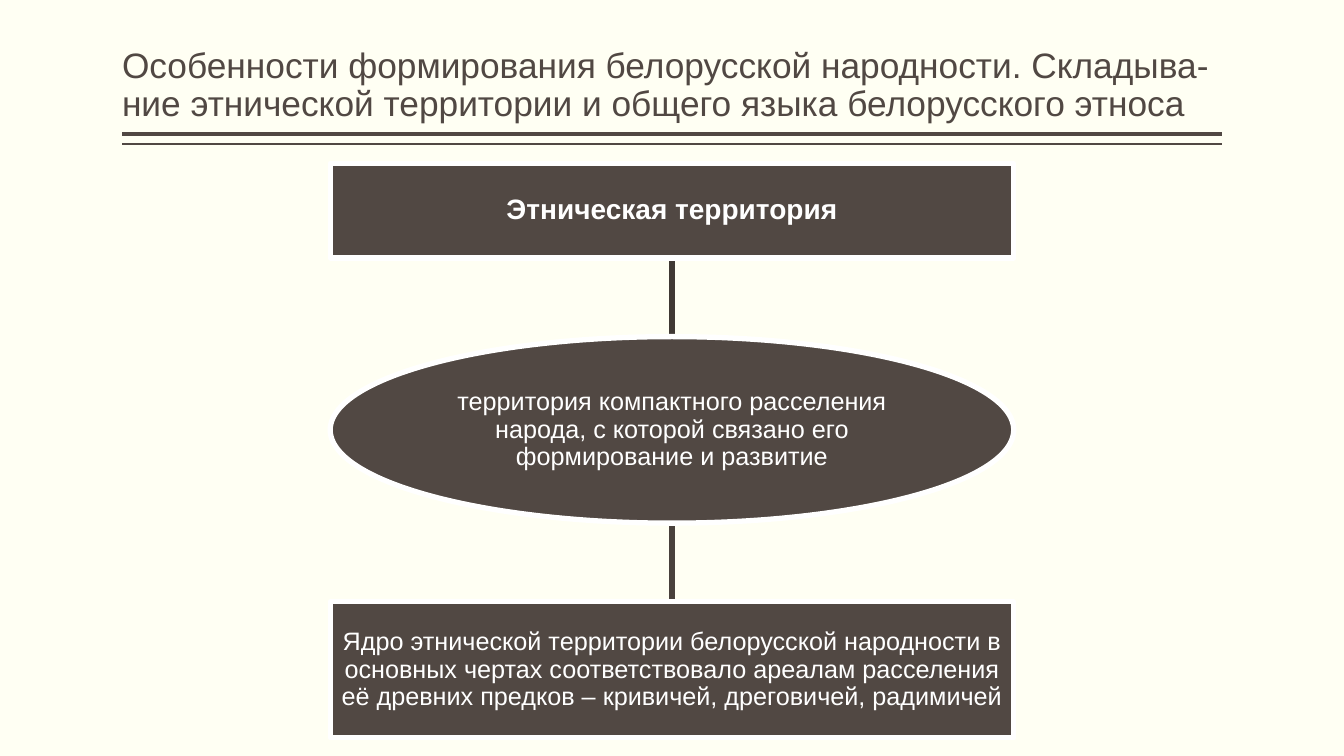
from dataclasses import dataclass

from lxml import etree
from pptx import Presentation
from pptx.dml.color import RGBColor
from pptx.enum.shapes import MSO_CONNECTOR, MSO_SHAPE
from pptx.enum.text import MSO_ANCHOR, MSO_AUTO_SIZE, PP_ALIGN
from pptx.oxml import parse_xml
from pptx.oxml.ns import nsdecls, qn
from pptx.util import Emu, Inches, Pt

RECT, OVAL = MSO_SHAPE.RECTANGLE, MSO_SHAPE.OVAL
STRAIGHT = MSO_CONNECTOR.STRAIGHT
MIDDLE, BOTTOM = MSO_ANCHOR.MIDDLE, MSO_ANCHOR.BOTTOM
LEFT, CENTER = PP_ALIGN.LEFT, PP_ALIGN.CENTER
NO_FIT = MSO_AUTO_SIZE.NONE
WIDTH, HEIGHT = Inches(13.33), Inches(7.5)


@dataclass(frozen=True)
class Theme:
    paper: str = "FFFFF3"
    brown: str = "514843"
    white: str = "FFFFFF"
    font: str = "Arial"
    title: float = 25.2
    heading: float = 20
    body: float = 18
    outline: float = 3.78
    spacing: float = 0.9


@dataclass(frozen=True)
class Node:
    shape: MSO_SHAPE
    height: float
    text: str
    size: float
    bold: bool = False


@dataclass(frozen=True)
class Line:
    x1: float
    y1: float
    x2: float
    y2: float
    color: str
    width: float


THEME = Theme()
MARGIN = 9.08
NODE_WIDTH, NODE_TOP, NODE_GAP = 50.86, 21.6, 10.4
TITLE = ("Особенности формирования белорусской народности. Складыва- "
         "ние этнической территории и общего языка белорусского этноса")
RULES = [Line(MARGIN, y, 100 - MARGIN, y, THEME.brown, width)
         for y, width in ((17.73, 3), (19.07, 1))]
NODES = [
    Node(RECT, 12.53, "Этническая территория", THEME.heading, True),
    Node(OVAL, 24.67, "территория компактного расселения народа, "
         "с которой связано его формирование и развитие", THEME.body),
    Node(RECT, 18, "Ядро этнической территории белорусской народности в "
         "основных чертах соответствовало ареалам расселения её древних "
         "предков – кривичей, дреговичей, радимичей", THEME.body),
]
LINK_COLORS = ["403934", "49413C"]
TEXT_SHADOW = (
    f'<a:effectLst {nsdecls("a")}><a:outerShdw blurRad="38100" dist="38100" '
    'dir="2700000" algn="tl"><a:srgbClr val="000000"><a:alpha val="43000"/>'
    '</a:srgbClr></a:outerShdw></a:effectLst>')


def col(share: float) -> Emu:
    return Emu(round(WIDTH * share / 100))


def row(share: float) -> Emu:
    return Emu(round(HEIGHT * share / 100))


def rgb(color: str) -> RGBColor:
    return RGBColor.from_string(color)


def assign(target, values: dict) -> None:
    for name, value in values.items():
        setattr(target, name, value)


def write(sp, text: str, size: float, color: str, bold: bool, align: PP_ALIGN,
          anchor: MSO_ANCHOR, inset_x: float, inset_y: float) -> None:
    tf = sp.text_frame
    assign(tf, dict(word_wrap=True, auto_size=NO_FIT, vertical_anchor=anchor,
                    margin_left=Inches(inset_x), margin_right=Inches(inset_x),
                    margin_top=Inches(inset_y), margin_bottom=Inches(inset_y)))
    p = tf.paragraphs[0]
    assign(p, dict(alignment=align, line_spacing=THEME.spacing,
                   space_before=Pt(0)))
    r = p.add_run()
    r.text = text
    r.font.color.rgb = rgb(color)
    r.font._element.append(parse_xml(TEXT_SHADOW))
    assign(r.font, dict(size=Pt(size), bold=bold, name=THEME.font))


def draw_line(s, line: Line) -> None:
    cx = s.shapes.add_connector(STRAIGHT, col(line.x1), row(line.y1),
                                col(line.x2), row(line.y2))
    cx.line.color.rgb = rgb(line.color)
    cx.line.width = Pt(line.width)
    etree.SubElement(cx._element.spPr, qn("a:effectLst"))


def draw_node(s, node: Node, top: float) -> None:
    sp = s.shapes.add_shape(node.shape, col(50 - NODE_WIDTH / 2), row(top),
                            col(NODE_WIDTH), row(node.height))
    sp.shadow.inherit = False
    sp.fill.solid()
    sp.fill.fore_color.rgb = rgb(THEME.brown)
    sp.line.color.rgb = rgb(THEME.white)
    sp.line.width = Pt(THEME.outline)
    write(sp, node.text, node.size, THEME.white, node.bold, CENTER, MIDDLE,
          0.01, 0.01)


def draw_title(s) -> None:
    sp = s.shapes.title
    assign(sp, dict(left=col(MARGIN), top=row(1.07),
                    width=col(100 - 2 * MARGIN), height=row(16)))
    write(sp, TITLE, THEME.title, THEME.brown, False, LEFT, BOTTOM, 0, 0.05)


def main() -> None:
    prs = Presentation()
    assign(prs, dict(slide_width=WIDTH, slide_height=HEIGHT))
    s = prs.slides.add_slide(prs.slide_layouts[5])
    s.background.fill.solid()
    s.background.fill.fore_color.rgb = rgb(THEME.paper)
    draw_title(s)
    for rule in RULES:
        draw_line(s, rule)
    tops = [NODE_TOP + sum(n.height + NODE_GAP for n in NODES[:i])
            for i in range(len(NODES))]
    for top, color in zip(tops[1:], LINK_COLORS):
        draw_line(s, Line(50, top - NODE_GAP, 50, top, color, THEME.outline))
    for node, top in zip(NODES, tops):
        draw_node(s, node, top)
    prs.save("out.pptx")


if __name__ == "__main__":
    main()
